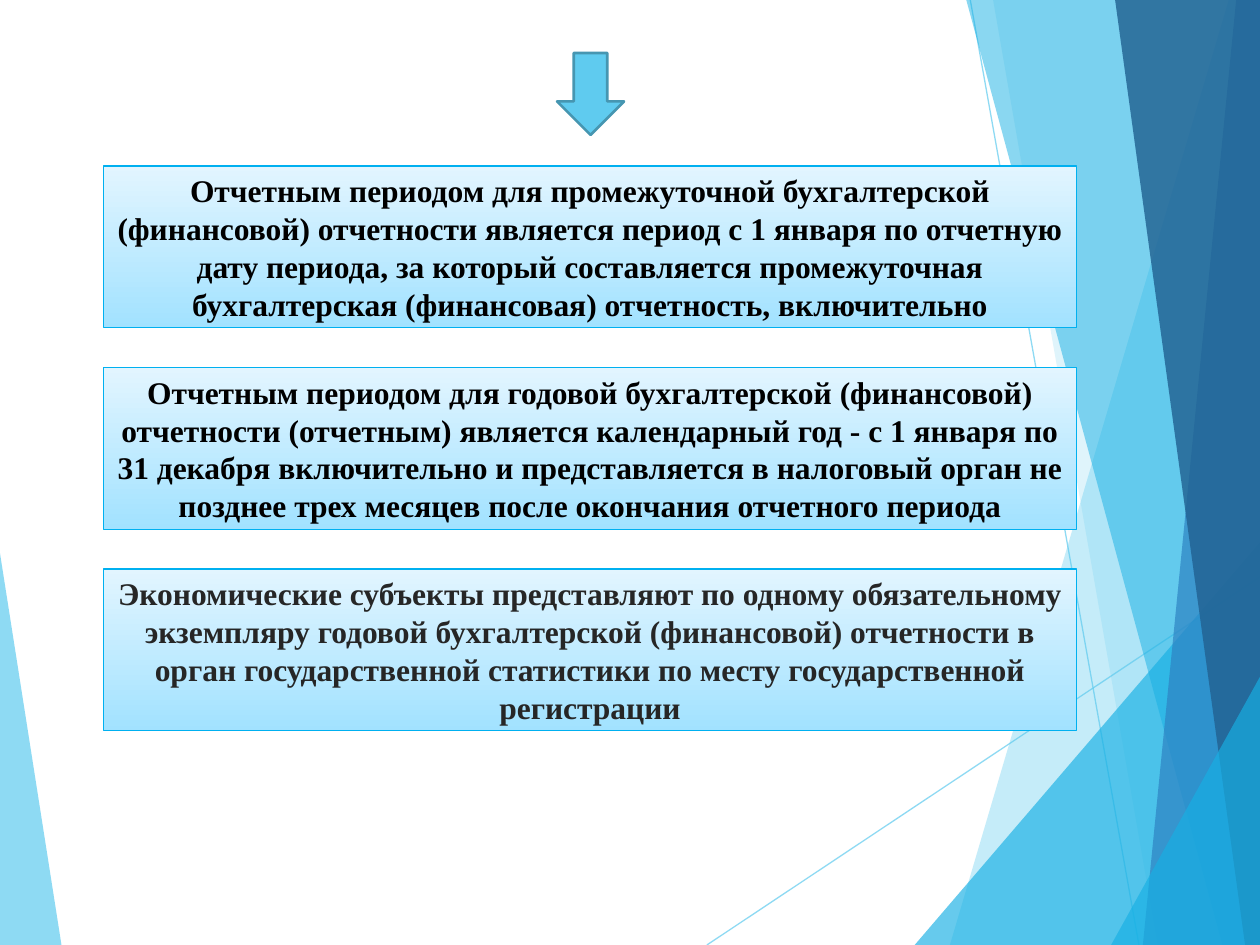
from lxml.etree import SubElement
from pptx import Presentation
from pptx.dml.color import RGBColor
from pptx.enum.shapes import MSO_CONNECTOR, MSO_SHAPE
from pptx.enum.text import MSO_ANCHOR, PP_ALIGN
from pptx.oxml.ns import qn
from pptx.util import Cm, Pt

COLORS = {
    "sky": "5FCBEF", "azure": "17B0E4", "blue": "2E83C3", "navy": "226292",
    "box_bottom": "A2E2FF", "box_top": "E2F5FF", "box_line": "00B0F0",
    "arrow_line": "4696B1", "black": "000000", "charcoal": "262626",
}

# Statements: text, text colour
STATEMENTS = [
    ("Отчетным периодом для промежуточной бухгалтерской (финансовой) отчетности "
     "является период с 1 января по отчетную дату периода, за который составляется "
     "промежуточная бухгалтерская (финансовая) отчетность, включительно", "black"),
    ("Отчетным периодом для годовой бухгалтерской (финансовой) отчетности (отчетным) "
     "является календарный год - с 1 января по 31 декабря включительно и представляется "
     "в налоговый орган не позднее трех месяцев после окончания отчетного периода", "black"),
    ("Экономические субъекты представляют по одному обязательному экземпляру годовой "
     "бухгалтерской (финансовой) отчетности в орган государственной статистики по месту "
     "государственной регистрации", "charcoal"),
]

# Background, in centimetres
WIDTH, HEIGHT = 25.4, 19.05
RIGHT = 25.43
LEFT_FACET = ([(0, 11.15), (1.24, HEIGHT), (0, HEIGHT)], "sky", 70)
RAYS = [((14.25, HEIGHT), (RIGHT, 11.61)), ((19.56, 0), (22.96, HEIGHT))]


def band(top_x, bottom_x):
    """Facet running down the full height along the right edge."""
    return [(top_x, 0), (bottom_x, HEIGHT), (RIGHT, HEIGHT), (RIGHT, 0)]


def corner(bottom_x, right_y):
    """Triangle in the bottom right corner."""
    return [(bottom_x, HEIGHT), (RIGHT, right_y), (RIGHT, HEIGHT)]


RIGHT_FACETS = [
    (band(24.77, 19.15), "sky", 36),
    (band(20.02, 23.34), "sky", 20),
    (corner(18.44, 10.9), "azure", 66),
    (band(19.48, 24.64), "azure", 50),
    (band(24.92, 23.04), "blue", 70),
    (band(22.48, 25.1), "navy", 82),
    (corner(22.4, 13.59), "azure", 66),
]

# Statement boxes, in centimetres
BOX_LEFT, BOX_TOP, BOX_WIDTH, BOX_HEIGHT, BOX_STEP = 2.09, 3.35, 19.61, 3.26, 4.06

presentation = Presentation()
presentation.slide_width, presentation.slide_height = Cm(WIDTH), Cm(HEIGHT)
slide = presentation.slides.add_slide(presentation.slide_layouts[6])
shapes = slide.shapes


def rgb(name):
    return RGBColor.from_string(COLORS[name])


def set_opacity(element, percent):
    color = next(element.iter(qn("a:srgbClr")))
    SubElement(color, qn("a:alpha")).set("val", str(percent * 1000))


def add_facet(points, color, opacity):
    corners = [(Cm(x), Cm(y)) for x, y in points]
    builder = shapes.build_freeform(*corners[0])
    builder.add_line_segments(corners[1:])
    facet = builder.convert_to_shape()
    facet.shadow.inherit = False
    facet.fill.solid()
    facet.fill.fore_color.rgb = rgb(color)
    set_opacity(facet._element.spPr, opacity)
    facet.line.fill.background()


def add_ray(start, end):
    ray = shapes.add_connector(MSO_CONNECTOR.STRAIGHT, *map(Cm, start + end))
    ray.line.color.rgb = rgb("sky")
    ray.line.width = Pt(0.75)
    set_opacity(ray._element.spPr, 70)
    SubElement(ray._element.spPr, qn("a:effectLst"))


def add_statement(top, text, color):
    box = shapes.add_shape(MSO_SHAPE.RECTANGLE, Cm(BOX_LEFT), Cm(top),
                           Cm(BOX_WIDTH), Cm(BOX_HEIGHT))
    box.shadow.inherit = False
    box.fill.gradient()
    box.fill.gradient_angle = 90
    for stop, stop_color in zip(box.fill.gradient_stops, ("box_bottom", "box_top")):
        stop.color.rgb = rgb(stop_color)
    box.line.color.rgb = rgb("box_line")
    box.line.width = Pt(0.75)
    frame = box.text_frame
    frame.word_wrap = True
    frame.vertical_anchor = MSO_ANCHOR.MIDDLE
    paragraph = frame.paragraphs[0]
    paragraph.text = text
    paragraph.alignment = PP_ALIGN.CENTER
    paragraph.font.name = "Times New Roman"
    paragraph.font.size = Pt(18)
    paragraph.font.bold = True
    paragraph.font.color.rgb = rgb(color)


# Background facets and rays
add_facet(*LEFT_FACET)
for ray_ends in RAYS:
    add_ray(*ray_ends)
for right_facet in RIGHT_FACETS:
    add_facet(*right_facet)

# Statements
for index, (statement, text_color) in enumerate(STATEMENTS):
    add_statement(BOX_TOP + index * BOX_STEP, statement, text_color)

# Arrow leading to the statements
arrow = shapes.add_shape(MSO_SHAPE.DOWN_ARROW, Cm(11.23), Cm(1.07), Cm(1.35), Cm(1.65))
arrow.shadow.inherit = False
arrow.fill.solid()
arrow.fill.fore_color.rgb = rgb("sky")
arrow.line.color.rgb = rgb("arrow_line")
arrow.line.width = Pt(1.5)

presentation.save("out.pptx")
